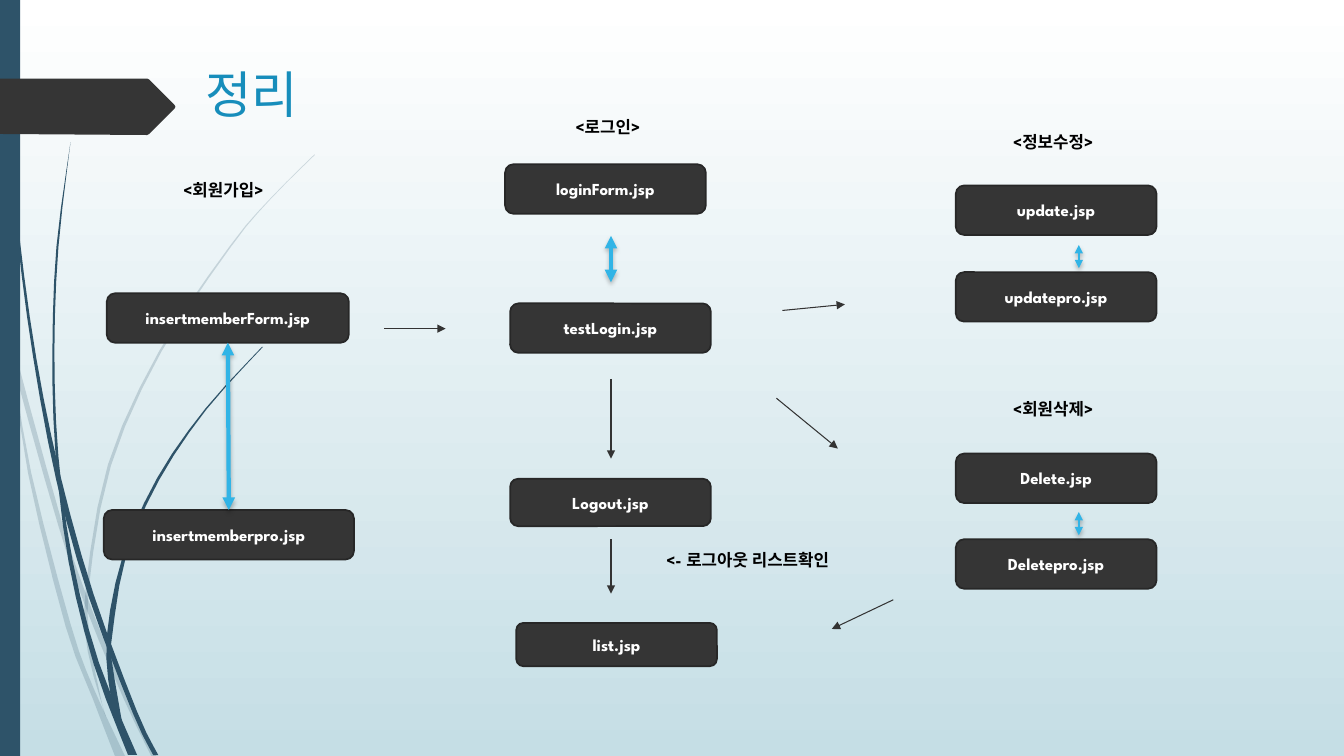
"""Build the summary slide that maps the member pages and the flow between them."""
from dataclasses import dataclass

from lxml import etree
from pptx import Presentation
from pptx.dml.color import RGBColor
from pptx.enum.shapes import MSO_CONNECTOR, MSO_SHAPE
from pptx.enum.text import MSO_ANCHOR, PP_ALIGN
from pptx.oxml.ns import qn
from pptx.util import Inches, Pt

BOX, ROUND = MSO_SHAPE.RECTANGLE, MSO_SHAPE.ROUNDED_RECTANGLE
LINE = MSO_CONNECTOR.STRAIGHT
TOP, MIDDLE = MSO_ANCHOR.TOP, MSO_ANCHOR.MIDDLE
LEFT, CENTER = PP_ALIGN.LEFT, PP_ALIGN.CENTER


@dataclass(frozen=True)
class Theme:
    font: str = "League Spartan"
    sky: RGBColor = RGBColor.from_string("FFFFFF")
    haze: RGBColor = RGBColor.from_string("C5DEE5")
    navy: RGBColor = RGBColor.from_string("2E5369")
    dark: RGBColor = RGBColor.from_string("353535")
    edge: RGBColor = RGBColor.from_string("272727")
    arrow: RGBColor = RGBColor.from_string("333333")
    link: RGBColor = RGBColor.from_string("31B4E6")
    title: RGBColor = RGBColor.from_string("178DBB")
    ink: RGBColor = RGBColor.from_string("000000")
    white: RGBColor = RGBColor.from_string("FFFFFF")
    big: Pt = Pt(36)
    small: Pt = Pt(12)


theme = Theme()
STYLES = {
    "page": ({"word_wrap": True, "vertical_anchor": MIDDLE}, CENTER,
             {"size": theme.small, "bold": True}, theme.white),
    "label": ({"word_wrap": False, "vertical_anchor": TOP}, LEFT,
              {"size": theme.small, "bold": True}, theme.ink),
    "title": ({"word_wrap": True, "vertical_anchor": TOP}, LEFT,
              {"size": theme.big, "bold": False}, theme.title),
}


def write(shape, text, style):
    layout, align, form, color = STYLES[style]
    frame = shape.text_frame
    for key, value in layout.items():
        setattr(frame, key, value)
    line = frame.paragraphs[0]
    line.alignment = align
    run = line.add_run()
    run.text = text
    for key, value in {"name": theme.font, **form}.items():
        setattr(run.font, key, value)
    run.font.color.rgb = color


def outline(points, color):
    spots = [(Inches(x), Inches(y)) for x, y in points]
    pen = shapes.build_freeform(*spots[0])
    pen.add_line_segments(spots[1:], close=True)
    shape = pen.convert_to_shape()
    shape.shadow.inherit = False
    shape.fill.solid()
    shape.fill.fore_color.rgb = color
    shape.line.fill.background()
    return shape


deck = Presentation()
deck.slide_width, deck.slide_height = Inches(13.33), Inches(7.5)
slide = deck.slides.add_slide(deck.slide_layouts[6])
shapes = slide.shapes

fill = slide.background.fill
fill.gradient()
fill.gradient_angle = 270
for stop, color in zip(fill.gradient_stops, (theme.sky, theme.haze)):
    stop.color.rgb = color

PALE = (
    ([(0, 2.99), (0.17, 3.76), (0.58, 5.22), (0.86, 6.05), (1.23, 6.94), (1.5, 7.5)],
     [(1.55, 7.5), (1.27, 6.92), (0.92, 6.07), (0.62, 5.2), (0.14, 3.45), (0, 2.82)]),
    ([(0.11, 3.5), (0.28, 4.7), (0.65, 6.21), (0.92, 6.93), (1.14, 7.5)],
     [(1.24, 7.5), (0.93, 6.83), (0.7, 6.19), (0.31, 4.69), (0.11, 3.5)]),
    ([(3.12, 1.53), (2.68, 1.97), (2.28, 2.44), (1.58, 3.48), (1.07, 4.61), (0.85, 5.84),
      (0.87, 6.46), (1.05, 7.11)],
     [(1.03, 7.06), (0.91, 6.46), (0.88, 5.84), (1.1, 4.62), (1.6, 3.49), (2.29, 2.45),
      (2.68, 1.98), (3.12, 1.54)]),
)
DEEP = (
    ([(0.03, 0), (0.07, 1.1), (0.17, 2.33), (0.33, 3.55), (0.56, 4.77), (0.88, 5.92),
      (1.32, 7.08), (1.52, 7.49)],
     [(1.57, 7.49), (1.36, 7.06), (0.93, 5.9), (0.6, 4.72), (0.36, 3.55), (0.19, 2.32),
      (0.08, 1.09), (0.04, 0)]),
    ([(0.7, 1.41), (0.56, 2.45), (0.52, 3.49), (0.55, 4.49), (0.68, 5.57), (0.93, 6.59), (1.27, 7.49)],
     [(1.36, 7.49), (0.98, 6.57), (0.72, 5.56), (0.58, 4.53), (0.54, 3.49), (0.58, 2.45), (0.7, 1.41)]),
    ([(2.6, 3.44), (2.04, 4.05), (1.56, 4.74), (1.22, 5.51), (1.06, 6.31), (1.1, 6.91), (1.22, 7.19)],
     [(1.21, 7.16), (1.11, 6.56), (1.11, 6.33), (1.25, 5.52), (1.58, 4.76), (2.05, 4.06), (2.61, 3.44)]),
)
STEPS = 3
for strands, alpha in ((PALE, 20), (DEEP, 100)):
    for sides in strands:
        points = []
        for side in sides:
            knots = [side[0], *side, side[-1]]
            for i in range(len(side) - 1):
                for t in (n / STEPS for n in range(STEPS)):
                    parts = ((-t + 2 * t ** 2 - t ** 3) / 2, (2 - 5 * t ** 2 + 3 * t ** 3) / 2,
                             (t + 4 * t ** 2 - 3 * t ** 3) / 2, (t ** 3 - t ** 2) / 2)
                    points.append([sum(p * k[axis] for p, k in zip(parts, knots[i:i + 4]))
                                   for axis in (0, 1)])
            points.append(side[-1])
        strand = outline(points, theme.navy)
        if alpha < 100:
            tint = strand._element.spPr.find(qn("a:solidFill"))[0]
            etree.SubElement(tint, qn("a:alpha"), val=str(alpha * 1000))

bar = shapes.add_shape(BOX, 0, 0, Inches(0.2), Inches(7.5))
bar.shadow.inherit = False
bar.fill.solid()
bar.fill.fore_color.rgb = theme.navy
bar.line.fill.background()
outline([(0, 0.78), (1.46, 0.78), (1.48, 0.79), (1.73, 1.04), (1.74, 1.06),
         (1.73, 1.08), (1.48, 1.33), (1.46, 1.34), (0, 1.33)], theme.dark)

for text, x, y, w, h in (
        ("loginForm.jsp", 5.01, 1.63, 1.99, 0.49), ("testLogin.jsp", 5.06, 3.01, 1.99, 0.49),
        ("insertmemberForm.jsp", 1.06, 2.91, 2.4, 0.49), ("insertmemberpro.jsp", 1.03, 5.06, 2.48, 0.49),
        ("list.jsp", 5.12, 6.18, 1.99, 0.43), ("Logout.jsp", 5.06, 4.75, 1.99, 0.47),
        ("update.jsp", 9.48, 1.84, 1.99, 0.49), ("updatepro.jsp", 9.48, 2.7, 1.99, 0.49),
        ("Delete.jsp", 9.48, 4.5, 1.99, 0.49), ("Deletepro.jsp", 9.48, 5.35, 1.99, 0.49)):
    page = shapes.add_shape(ROUND, Inches(x), Inches(y), Inches(w), Inches(h))
    page.shadow.inherit = False
    page.fill.solid()
    page.fill.fore_color.rgb = theme.dark
    page.line.color.rgb = theme.edge
    page.line.width = Pt(1.25)
    write(page, text, "page")

for text, style, x, y, w, h in (
        ("정리", "title", 1.94, 0.58, 9.75, 1.1), ("<회원가입>", "label", 1.72, 1.73, 1.1, 0.3),
        ("<로그인>", "label", 5.61, 1.11, 1, 0.3), ("<정보수정>", "label", 9.95, 1.26, 1.13, 0.3),
        ("<회원삭제>", "label", 9.95, 3.91, 1.13, 0.3),
        ("<- 로그아웃 리스트확인", "label", 6.51, 5.4, 1.98, 0.3)):
    write(shapes.add_textbox(Inches(x), Inches(y), Inches(w), Inches(h)), text, style)

LINKS = ((2.26, 3.4, 2.27, 5.06, 3), (6.06, 2.34, 6.06, 2.8, 3),
         (10.7, 2.43, 10.7, 2.66, 1.75), (10.7, 5.08, 10.7, 5.31, 1.75))
FLOWS = ((3.81, 3.26, 4.42, 3.26, 0.75), (7.76, 3.08, 8.38, 3.02, 0.75), (7.7, 3.95, 8.31, 4.45, 0.75),
         (6.06, 3.76, 6.06, 4.55, 0.75), (6.06, 5.35, 6.06, 5.89, 0.75), (8.86, 5.95, 8.25, 6.24, 0.75))
for lines, color, ends in ((LINKS, theme.link, ("headEnd", "tailEnd")), (FLOWS, theme.arrow, ("tailEnd",))):
    for *spots, width in lines:
        wire = shapes.add_connector(LINE, *map(Inches, spots))
        wire.line.color.rgb = color
        wire.line.width = Pt(width)
        for end in ends:
            etree.SubElement(wire.get_or_add_ln(), qn("a:" + end), type="triangle")
        effect = etree.SubElement(wire._element.spPr, qn("a:effectLst"))
        if lines is LINKS:
            shade = etree.SubElement(effect, qn("a:outerShdw"), blurRad=str(Pt(3)), dist=str(Pt(2)),
                                     dir="5400000", rotWithShape="0")
            ink = etree.SubElement(shade, qn("a:srgbClr"), val=str(theme.ink))
            etree.SubElement(ink, qn("a:alpha"), val="25000")

deck.save("out.pptx")
